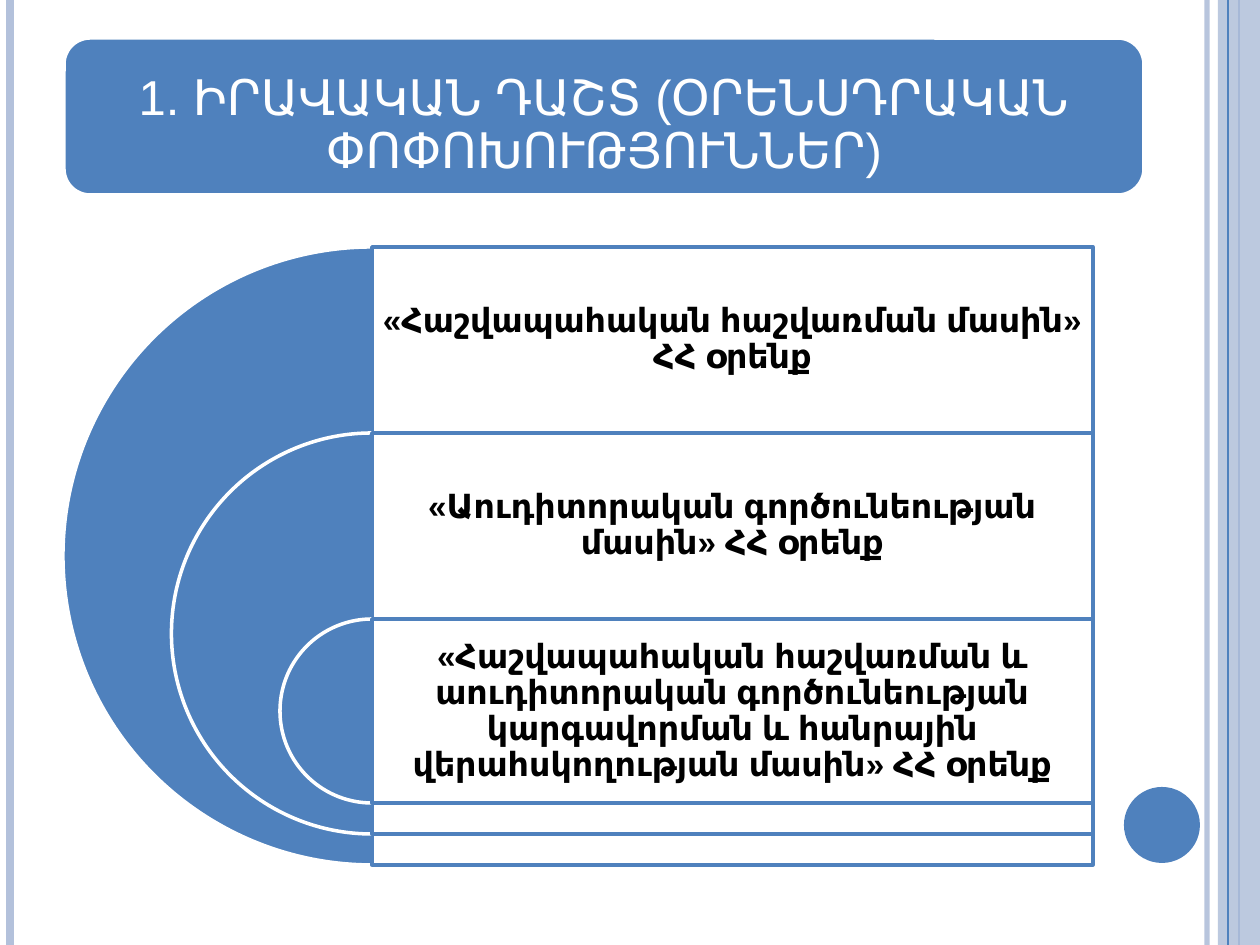
import pptx
import pptx.util
from lxml import etree
from pptx.dml.color import RGBColor
from pptx.enum.shapes import MSO_CONNECTOR, MSO_SHAPE
from pptx.enum.text import MSO_ANCHOR, PP_ALIGN
from pptx.oxml.ns import qn

WIDTH, HEIGHT = 1260, 945
EMU_PER_PX = 914400 / 126

BLUE = RGBColor(0x4F, 0x81, 0xBD)
PALE_BLUE = RGBColor(0xB3, 0xC1, 0xDB)
WHITE = RGBColor(0xFF, 0xFF, 0xFF)
BLACK = RGBColor(0x00, 0x00, 0x00)

TITLE = "1. ԻՐԱՎԱԿԱՆ ԴԱՇՏ (ՕՐԵՆՍԴՐԱԿԱՆ ՓՈՓՈԽՈՒԹՅՈՒՆՆԵՐ)"
LAWS = [
    "«Հաշվապահական հաշվառման մասին» ՀՀ օրենք",
    "«Աուդիտորական գործունեության մասին» ՀՀ օրենք",
    "«Հաշվապահական հաշվառման և աուդիտորական գործունեության "
    "կարգավորման և հանրային վերահսկողության մասին» ՀՀ օրենք",
]

# Nested half circles share a vertical axis, which is also the panels' left edge
AXIS_X, PANEL_WIDTH = 372, 721
FIRST_TOP, ROW_HEIGHT = 247, 186
FIRST_DIAMETER, DIAMETER_STEP = 618, 217


def px(length):
    return pptx.util.Emu(round(length * EMU_PER_PX))


def set_opacity(fill_parent, percent):
    color = fill_parent.find(qn("a:solidFill"))[0]
    etree.SubElement(color, qn("a:alpha")).set("val", str(percent * 1000))


def add_shape(slide, kind, box, fill, outline=None, opacity=100):
    shape = slide.shapes.add_shape(kind, *map(px, box))
    shape.shadow.inherit = False
    shape.fill.solid()
    shape.fill.fore_color.rgb = fill
    if opacity < 100:
        set_opacity(shape._element.spPr, opacity)
    if outline is None:
        shape.line.fill.background()
    else:
        shape.line.color.rgb = outline
        shape.line.width = pptx.util.Pt(2)
    return shape


def add_vertical_line(slide, x, color, width, opacity=100):
    line = slide.shapes.add_connector(
        MSO_CONNECTOR.STRAIGHT, px(x), px(0), px(x), px(HEIGHT))
    line.line.color.rgb = color
    line.line.width = pptx.util.Pt(width)
    properties = line._element.spPr
    if opacity < 100:
        set_opacity(properties.find(qn("a:ln")), opacity)
    etree.SubElement(properties, qn("a:effectLst"))


def write_text(shape, text, size, color, margin, top_margin, bold=False):
    frame = shape.text_frame
    frame.word_wrap = True
    frame.vertical_anchor = MSO_ANCHOR.MIDDLE
    frame.margin_left = frame.margin_right = frame.margin_bottom = px(margin)
    frame.margin_top = px(top_margin)
    paragraph = frame.paragraphs[0]
    paragraph.text = text
    paragraph.alignment = PP_ALIGN.CENTER
    paragraph.line_spacing = 0.9
    paragraph.font.name = "Arial"
    paragraph.font.size = pptx.util.Pt(size)
    paragraph.font.bold = bold
    paragraph.font.color.rgb = color


def add_side_bars(slide):
    add_vertical_line(slide, 1207, PALE_BLUE, 3, opacity=93)
    add_vertical_line(slide, 10, PALE_BLUE, 4.5)
    add_vertical_line(slide, 1239, BLUE, 1.5)
    add_shape(slide, MSO_SHAPE.RECTANGLE, (1218, 0, 42, HEIGHT), PALE_BLUE, opacity=87)
    add_vertical_line(slide, 1228, BLUE, 0.75)
    add_shape(slide, MSO_SHAPE.OVAL, (1124, 787, 76, 76), BLUE)


def add_title(slide):
    banner = add_shape(slide, MSO_SHAPE.ROUNDED_RECTANGLE, (64, 38, 1080, 157), BLUE, WHITE)
    write_text(banner, TITLE, 28, WHITE, margin=15, top_margin=35)


def add_law(slide, index, text):
    top = FIRST_TOP + index * ROW_HEIGHT
    diameter = FIRST_DIAMETER - index * DIAMETER_STEP

    half_circle = add_shape(
        slide, MSO_SHAPE.PIE, (AXIS_X - diameter / 2, top, diameter, diameter), BLUE, WHITE)
    # Angles of 90 and 270 degrees
    half_circle.adjustments[0] = 54
    half_circle.adjustments[1] = 162

    add_shape(slide, MSO_SHAPE.RECTANGLE, (AXIS_X, top, PANEL_WIDTH, diameter),
              WHITE, BLUE, opacity=90)
    label = slide.shapes.add_textbox(*map(px, (AXIS_X, top, PANEL_WIDTH, ROW_HEIGHT)))
    write_text(label, text, 19, BLACK, margin=9, top_margin=9, bold=True)


def main():
    presentation = pptx.Presentation()
    presentation.slide_width = px(WIDTH)
    presentation.slide_height = px(HEIGHT)
    slide = presentation.slides.add_slide(presentation.slide_layouts[6])

    add_side_bars(slide)
    add_title(slide)
    for index, text in enumerate(LAWS):
        add_law(slide, index, text)

    presentation.save("out.pptx")


if __name__ == "__main__":
    main()
